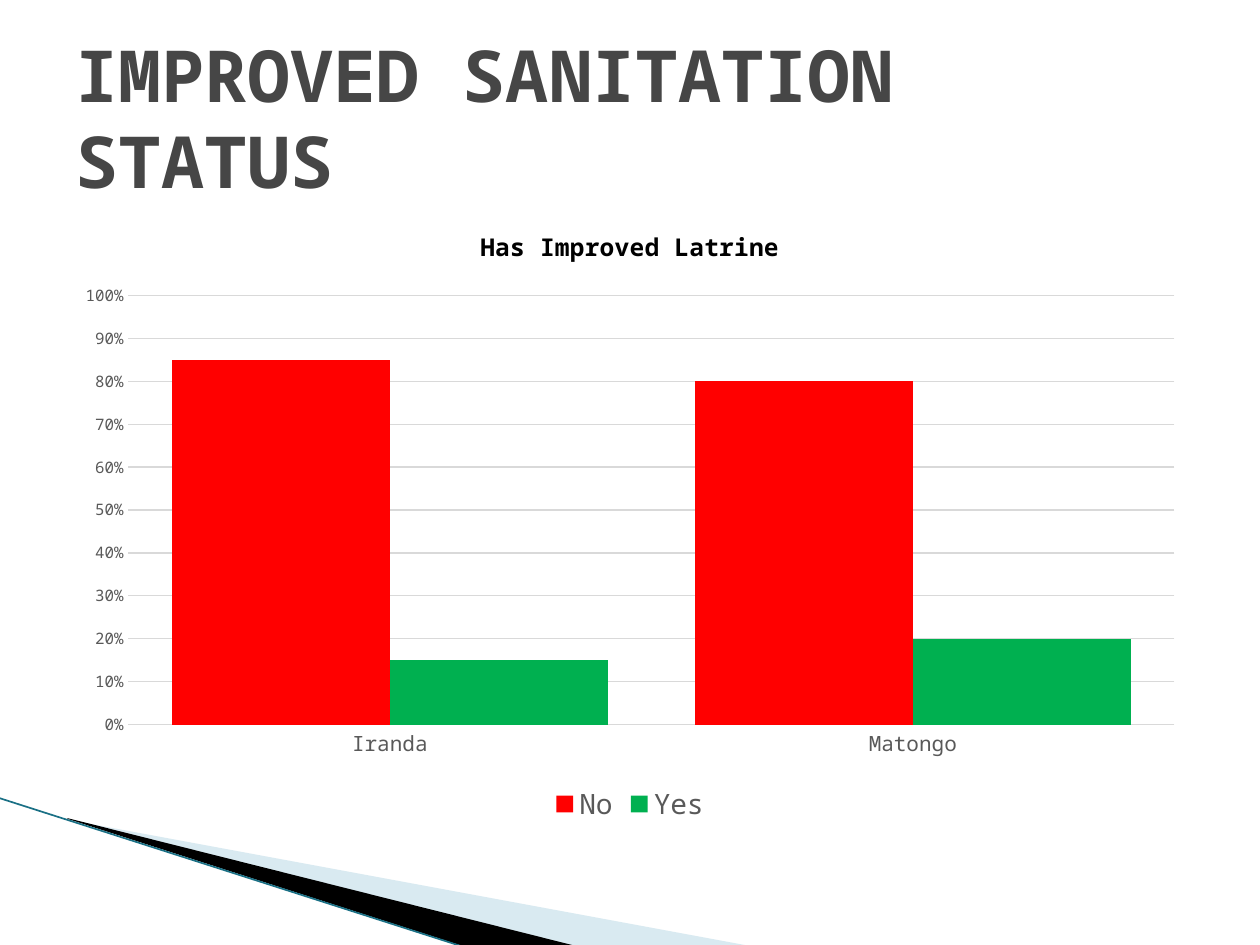
"""Build the improved sanitation status slide with its clustered column chart."""
from dataclasses import dataclass

import lxml.etree
import pptx
import pptx.chart.data
import pptx.dml.color
import pptx.enum.chart
import pptx.enum.shapes
import pptx.enum.text
import pptx.oxml
import pptx.oxml.ns
import pptx.util

EMU_PER_PX = 914400 / 126
FONT = "Noto Sans Mono"
COLORS = {
    "title": "464646",
    "text": "000000",
    "label": "595959",
    "grid": "D9D9D9",
    "pale": "A0CBDC",
    "black": "000000",
    "edge": "1A7085",
    "No": "FF0000",
    "Yes": "00B050",
}


@dataclass
class Wedge:
    points: list[tuple[int, int]]
    color: str
    alpha: int = 100


@dataclass
class Series:
    name: str
    values: tuple[float, ...]


WEDGES = [
    Wedge([(69, 820), (750, 946), (575, 946), (69, 819)], "pale", 40),
    Wedge([(67, 818), (576, 946), (469, 948), (68, 819)], "black"),
]
CATEGORIES = ["Iranda", "Matongo"]
SERIES = [Series("No", (0.85, 0.8)), Series("Yes", (0.15, 0.2))]


def px(n: int) -> pptx.util.Emu:
    return pptx.util.Emu(round(n * EMU_PER_PX))


def rgb(name: str) -> pptx.dml.color.RGBColor:
    return pptx.dml.color.RGBColor.from_string(COLORS[name])


def set_font(font, size: float, color: str, bold: bool = False) -> None:
    font.name = FONT
    font.size = pptx.util.Pt(size)
    font.bold = bold
    font.color.rgb = rgb(color)


def write(tf, text: str, *, size: float, color: str, bold: bool = False, align=None) -> None:
    p = tf.paragraphs[0]
    p.alignment = align
    r = p.add_run()
    r.text = text
    set_font(r.font, size, color, bold)


def draw_wedge(s, wedge: Wedge) -> None:
    builder = s.shapes.build_freeform(*wedge.points[0], scale=EMU_PER_PX)
    builder.add_line_segments(wedge.points[1:], close=True)
    sp = builder.convert_to_shape()
    sp.shadow.inherit = False
    sp.line.fill.background()
    sp.fill.solid()
    sp.fill.fore_color.rgb = rgb(wedge.color)
    if wedge.alpha < 100:
        clr = sp.fill._xPr.find(".//" + pptx.oxml.ns.qn("a:srgbClr"))
        lxml.etree.SubElement(clr, pptx.oxml.ns.qn("a:alpha"), val=str(wedge.alpha * 1000))


def draw_edge(s, start: tuple[int, int], end: tuple[int, int]) -> None:
    line = s.shapes.add_connector(
        pptx.enum.shapes.MSO_CONNECTOR.STRAIGHT, *map(px, start + end)
    )
    line.line.color.rgb = rgb("edge")
    line.line.width = pptx.util.Pt(0.95)
    lxml.etree.SubElement(line._element.spPr, pptx.oxml.ns.qn("a:effectLst"))


def draw_title(s, text: str) -> None:
    sp = s.shapes.title
    sp.left, sp.top, sp.width, sp.height = map(px, (63, 38, 1134, 157))
    tf = sp.text_frame
    tf.word_wrap = True
    tf.auto_size = pptx.enum.text.MSO_AUTO_SIZE.NONE
    tf.vertical_anchor = pptx.enum.text.MSO_ANCHOR.MIDDLE
    write(tf, text, size=41, color="title", bold=True, align=pptx.enum.text.PP_ALIGN.LEFT)


def style_axis(axis, size: float) -> None:
    axis.major_tick_mark = pptx.enum.chart.XL_TICK_MARK.NONE
    axis.minor_tick_mark = pptx.enum.chart.XL_TICK_MARK.NONE
    set_font(axis.tick_labels.font, size, "label")


def style_line(line) -> None:
    line.color.rgb = rgb("grid")
    line.width = pptx.util.Pt(0.75)


def draw_chart(s, title: str) -> None:
    data = pptx.chart.data.CategoryChartData(number_format="0%")
    data.categories = CATEGORIES
    for series in SERIES:
        data.add_series(series.name, series.values)
    chart = s.shapes.add_chart(
        pptx.enum.chart.XL_CHART_TYPE.COLUMN_CLUSTERED,
        *map(px, (63, 204, 1134, 624)),
        data,
    ).chart
    set_font(chart.font, 10, "text")
    chart.has_title = True
    write(chart.chart_title.text_frame, title, size=14, color="text", bold=True)
    chart.chart_title.include_in_layout = False

    style_axis(chart.category_axis, 12)
    style_line(chart.category_axis.format.line)
    axis = chart.value_axis
    style_axis(axis, 9)
    axis.format.line.fill.background()
    axis.minimum_scale, axis.maximum_scale, axis.major_unit = 0, 1, 0.1
    axis.tick_labels.number_format = "0%"
    axis.tick_labels.number_format_is_linked = False
    style_line(axis.major_gridlines.format.line)

    chart.has_legend = True
    chart.legend.position = pptx.enum.chart.XL_LEGEND_POSITION.BOTTOM
    chart.legend.include_in_layout = False
    set_font(chart.legend.font, 16, "label")

    plot = chart.plots[0]
    plot.gap_width, plot.overlap = 40, 0
    plot.vary_by_categories = False
    for series in plot.series:
        series.format.fill.solid()
        series.format.fill.fore_color.rgb = rgb(series.name)


def main() -> None:
    prs = pptx.Presentation()
    prs.slide_width, prs.slide_height = px(1260), px(945)
    s = prs.slides.add_slide(prs.slide_layouts[5])
    for wedge in WEDGES:
        draw_wedge(s, wedge)
    draw_edge(s, (-1, 798), (467, 948))
    draw_title(s, "IMPROVED SANITATION STATUS")
    draw_chart(s, "Has Improved Latrine")
    prs.save("out.pptx")


if __name__ == "__main__":
    main()
